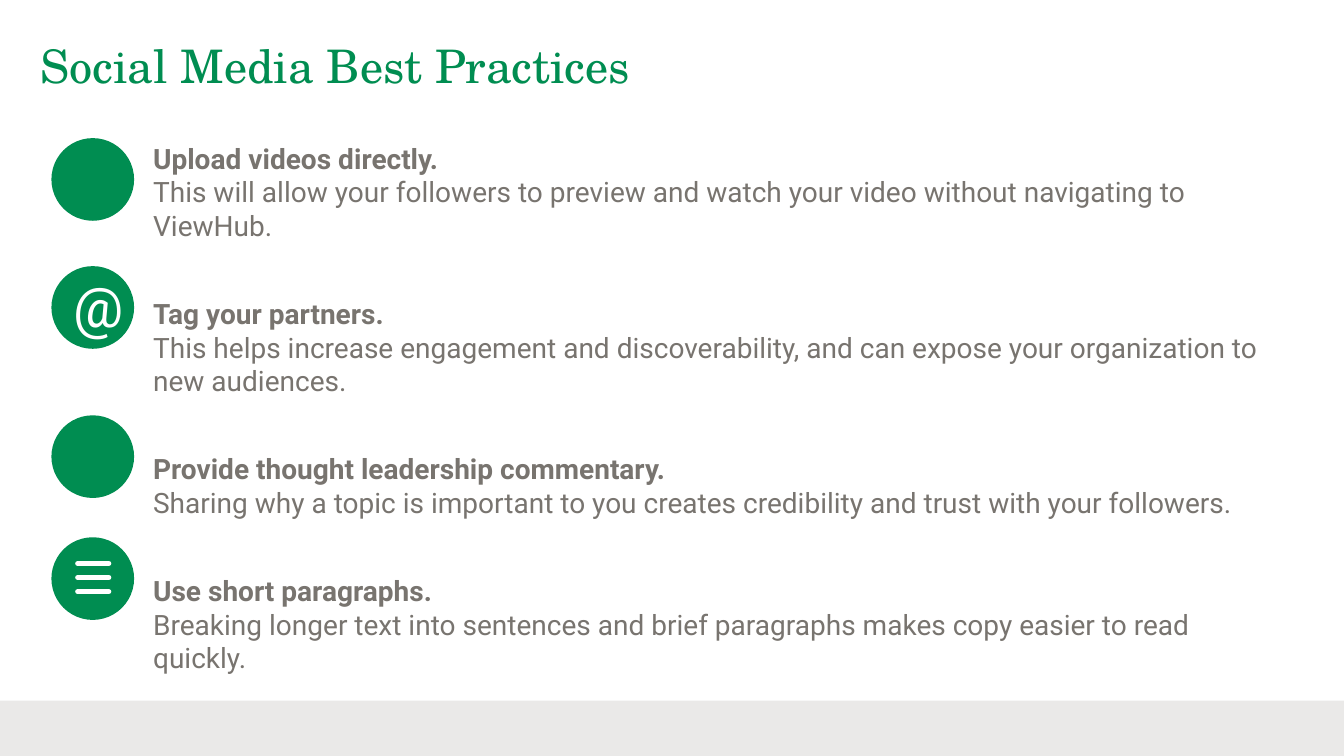
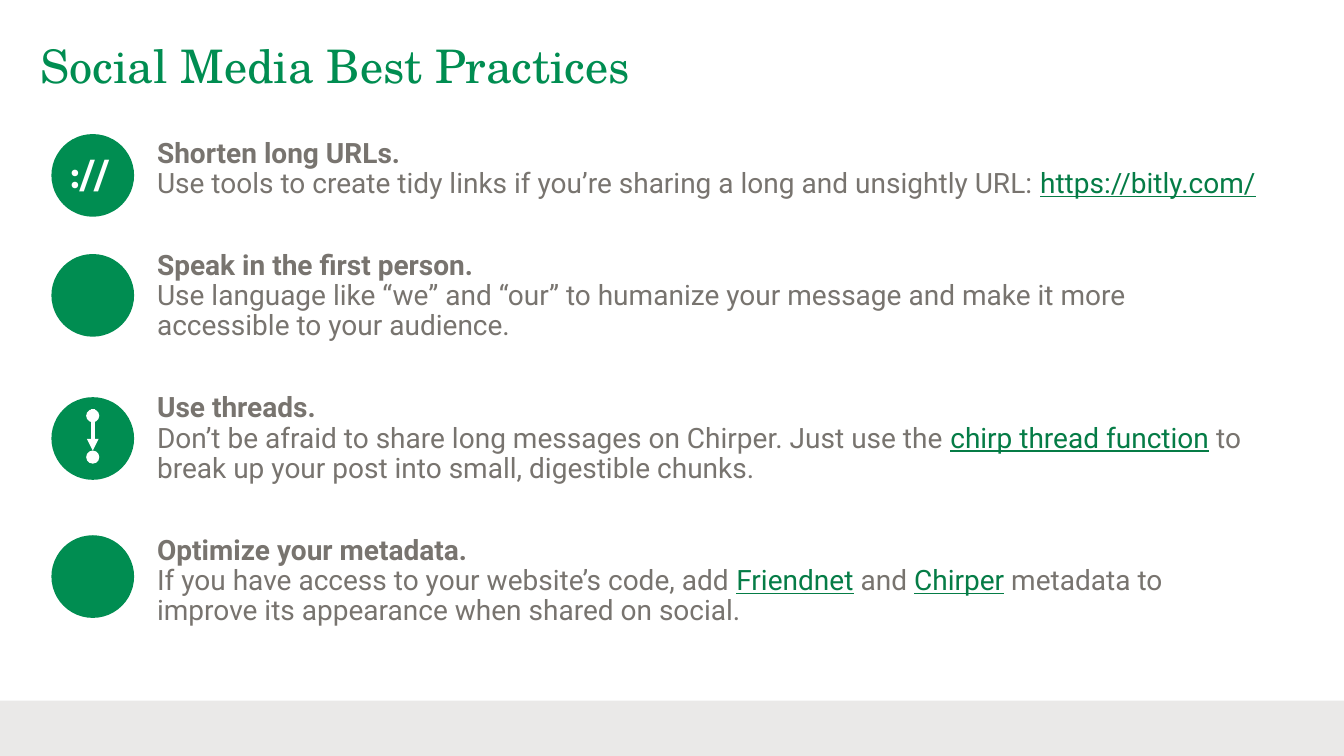
from pptx import Presentation
from pptx.dml.color import RGBColor
from pptx.enum.shapes import MSO_CONNECTOR, MSO_SHAPE
from pptx.enum.text import MSO_ANCHOR, MSO_AUTO_SIZE, PP_ALIGN
from pptx.oxml.ns import qn
from pptx.util import Inches, Pt
from lxml import etree

OVAL = MSO_SHAPE.OVAL
RECTANGLE = MSO_SHAPE.RECTANGLE
STRAIGHT = MSO_CONNECTOR.STRAIGHT
TOP, MIDDLE = MSO_ANCHOR.TOP, MSO_ANCHOR.MIDDLE
LEFT, CENTER = PP_ALIGN.LEFT, PP_ALIGN.CENTER
NO_AUTOFIT = MSO_AUTO_SIZE.NONE

GREEN = RGBColor(0x00, 0x8D, 0x51)
LINK_GREEN = RGBColor(0x05, 0x7C, 0x46)
GRAY = RGBColor(0x78, 0x74, 0x6F)
BAND_GRAY = RGBColor(0xE8, 0xE7, 0xE6)
WHITE = RGBColor(0xFF, 0xFF, 0xFF)

TITLE_FONT, BODY_FONT, SYMBOL_FONT = "TeX Gyre Schola", "Roboto", "Montserrat"
TITLE_ONLY = 5

SLIDE_WIDTH, SLIDE_HEIGHT = 13.33, 7.5
BAND_HEIGHT = 0.55
BADGE_LEFT, BADGE_SIZE = 0.51, 0.82
BODY_HEIGHT = 5.4

# Each tip is a heading and its text, in which every second piece is a link.
FIRST_TIPS = [
    ("Upload videos directly.",
     ["This will allow your followers to preview and watch your video "
      "without navigating to ViewHub."]),
    ("Tag your partners.",
     ["This helps increase engagement and discoverability, and can expose "
      "your organization to new audiences."]),
    ("Provide thought leadership commentary.",
     ["Sharing why a topic is important to you creates credibility and "
      "trust with your followers."]),
    ("Use short paragraphs.",
     ["Breaking longer text into sentences and brief paragraphs makes copy "
      "easier to read quickly."]),
]
SECOND_TIPS = [
    ("Shorten long URLs.",
     ["Use tools to create tidy links if you’re sharing a long and "
      "unsightly URL: ", "https://bitly.com/"]),
    ("Speak in the first person.",
     ["Use language like “we” and “our” to humanize your message and make "
      "it more accessible to your audience."]),
    ("Use threads.",
     ["Don’t be afraid to share long messages on Chirper. Just use the ",
      "chirp thread function",
      " to break up your post into small, digestible chunks."]),
    ("Optimize your metadata.",
     ["If you have access to your website’s code, add ", "Friendnet",
      " and ", "Chirper",
      " metadata to improve its appearance when shared on social."]),
]


def style_run(run, font_name, size, color, bold=False, underline=False):
    font = run.font
    font.name, font.size, font.bold = font_name, Pt(size), bold
    font.underline = underline
    font.color.rgb = color


def add_filled_shape(slide, kind, left, top, width, height, color):
    shape = slide.shapes.add_shape(
        kind, Inches(left), Inches(top), Inches(width), Inches(height))
    shape.shadow.inherit = False
    shape.fill.solid()
    shape.fill.fore_color.rgb = color
    shape.line.fill.background()
    return shape


def add_white_line(slide, start, end, width):
    """Add a line and return it with its a:ln element."""
    connector = slide.shapes.add_connector(
        STRAIGHT, *(Inches(value) for value in start + end))
    connector.line.color.rgb = WHITE
    connector.line.width = Pt(width)
    properties = connector._element.spPr
    etree.SubElement(properties, qn("a:effectLst"))
    return connector, properties.find(qn("a:ln"))


def add_band(slide):
    band = add_filled_shape(slide, RECTANGLE, 0, SLIDE_HEIGHT - BAND_HEIGHT,
                            SLIDE_WIDTH, BAND_HEIGHT, BAND_GRAY)
    color = band._element.spPr.find(qn("a:solidFill"))[0]
    etree.SubElement(color, qn("a:alpha")).set("val", "90000")


def add_tip_slide(presentation, title):
    slide = presentation.slides.add_slide(
        presentation.slide_layouts[TITLE_ONLY])
    add_band(slide)
    placeholder = slide.shapes.title
    placeholder.left, placeholder.top = Inches(0.3), Inches(0.38)
    placeholder.width, placeholder.height = Inches(12.3), Inches(0.95)
    text_frame = placeholder.text_frame
    text_frame.text = title
    text_frame.auto_size = NO_AUTOFIT
    text_frame.vertical_anchor = TOP
    paragraph = text_frame.paragraphs[0]
    paragraph.alignment, paragraph.line_spacing = LEFT, 0.9
    style_run(paragraph.runs[0], TITLE_FONT, 33, GREEN)
    return slide


def add_tips(slide, tips, left, top, width, line_spacing, gap):
    box = slide.shapes.add_textbox(
        Inches(left), Inches(top), Inches(width), Inches(BODY_HEIGHT))
    text_frame = box.text_frame
    text_frame.word_wrap = True
    for index, (heading, pieces) in enumerate(tips):
        if index == 0:
            paragraph = text_frame.paragraphs[0]
        else:
            paragraph = text_frame.add_paragraph()
            paragraph.space_before = Pt(gap)
        paragraph.line_spacing = line_spacing
        paragraph.text = heading
        style_run(paragraph.runs[0], BODY_FONT, 20, GRAY, bold=True)
        paragraph.add_line_break()
        for position, piece in enumerate(pieces):
            is_link = position % 2 == 1
            run = paragraph.add_run()
            run.text = piece
            style_run(run, BODY_FONT, 20, LINK_GREEN if is_link else GRAY,
                      underline=is_link)


def add_badge(slide, top):
    return add_filled_shape(slide, OVAL, BADGE_LEFT, top,
                            BADGE_SIZE, BADGE_SIZE, GREEN)


def add_badge_text(badge, text, font_name, size, margins, bold=False):
    """Write a symbol; margins are left, top, right and bottom. Return its run."""
    text_frame = badge.text_frame
    text_frame.text = text
    text_frame.word_wrap = True
    text_frame.vertical_anchor = MIDDLE
    (text_frame.margin_left, text_frame.margin_top, text_frame.margin_right,
     text_frame.margin_bottom) = (Inches(margin) for margin in margins)
    paragraph = text_frame.paragraphs[0]
    paragraph.alignment = CENTER
    run = paragraph.runs[0]
    style_run(run, font_name, size, WHITE, bold)
    return run


def draw_at_sign(slide, badge, top):
    add_badge_text(badge, "@", BODY_FONT, 40, (0.1, 0.05, 0.1, 0.1))


def draw_url_slashes(slide, badge, top):
    run = add_badge_text(badge, ": / /", SYMBOL_FONT, 24,
                         (0, 0.05, 0.07, 0.05), bold=True)
    run._r.get_or_add_rPr().set("spc", "-300")


def draw_text_lines(slide, badge, top):
    left = BADGE_LEFT + 0.26
    for row in range(3):
        y = top + 0.26 + row * 0.14
        outline = add_white_line(slide, (left, y), (left + 0.31, y), 3.5)[1]
        outline.set("cap", "rnd")


def draw_thread(slide, badge, top):
    dot_size = 0.13
    left = BADGE_LEFT + (BADGE_SIZE - dot_size) / 2
    dots = [add_filled_shape(slide, OVAL, left, top + offset,
                             dot_size, dot_size, WHITE)
            for offset in (0.12, 0.53)]
    center = left + dot_size / 2
    arrow, outline = add_white_line(
        slide, (center, top + 0.12), (center, top + 0.53), 2.75)
    for connect, dot in zip((arrow.begin_connect, arrow.end_connect), dots):
        connect(dot, 0)
    etree.SubElement(outline, qn("a:tailEnd")).set("type", "triangle")


def add_badges(slide, badges):
    """Add a badge at each top, with its symbol if it has one."""
    for top, draw_symbol in badges:
        badge = add_badge(slide, top)
        if draw_symbol:
            draw_symbol(slide, badge, top)


def main():
    presentation = Presentation()
    presentation.slide_width = Inches(SLIDE_WIDTH)
    presentation.slide_height = Inches(SLIDE_HEIGHT)
    title = "Social Media Best Practices"

    slide = add_tip_slide(presentation, title)
    add_tips(slide, FIRST_TIPS, 1.42, 1.35, 11.18, line_spacing=1, gap=39)
    add_badges(slide, [(1.37, None), (2.64, draw_at_sign),
                       (4.12, None), (5.33, draw_text_lines)])

    slide = add_tip_slide(presentation, title)
    add_tips(slide, SECOND_TIPS, 1.46, 1.33, 11.1, line_spacing=0.9, gap=37)
    add_badges(slide, [(1.33, draw_url_slashes), (2.52, None),
                       (3.94, draw_thread), (5.31, None)])

    presentation.save("out.pptx")


if __name__ == "__main__":
    main()
